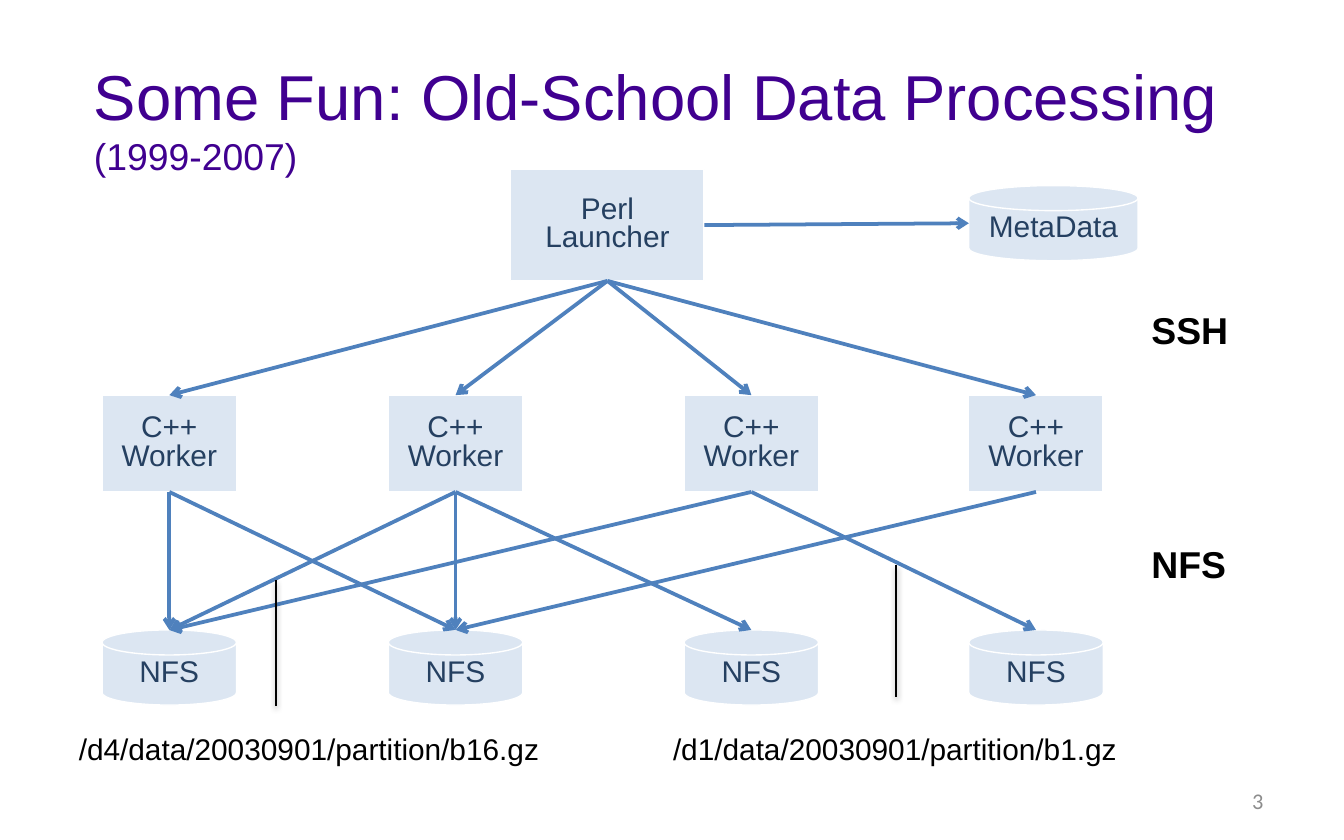
from dataclasses import dataclass

import pptx
import pptx.dml.color
import pptx.enum.shapes
import pptx.enum.text
import pptx.oxml
import pptx.oxml.ns
import pptx.util

Cm = pptx.util.Cm
Pt = pptx.util.Pt
Shape = pptx.enum.shapes.MSO_SHAPE
Align = pptx.enum.text.PP_ALIGN
Anchor = pptx.enum.text.MSO_ANCHOR

PALE, NAVY, BLUE = "DCE6F2", "254061", "4F81BD"
WHITE, BLACK, PURPLE, GRAY = "FFFFFF", "000000", "400090", "8C8C8C"
DRAWING = pptx.oxml.ns.nsdecls("a")
NO_EFFECT = f"<a:effectLst {DRAWING}/>"
SOFT_SHADOW = (
    f'<a:effectLst {DRAWING}><a:outerShdw blurRad="39370" dist="20320" dir="5400000" '
    'rotWithShape="0"><a:srgbClr val="000000"><a:alpha val="38000"/></a:srgbClr>'
    "</a:outerShdw></a:effectLst>"
)


@dataclass(frozen=True)
class Node:
    """A labelled box or disk; lengths in centimetres."""
    text: str
    left: float
    top: float
    width: float
    height: float
    preset: Shape

    @property
    def top_center(self) -> tuple[float, float]:
        return self.left + self.width / 2, self.top

    @property
    def bottom_center(self) -> tuple[float, float]:
        return self.left + self.width / 2, self.top + self.height

    @property
    def left_middle(self) -> tuple[float, float]:
        return self.left, self.top + self.height / 2

    @property
    def right_middle(self) -> tuple[float, float]:
        return self.left + self.width, self.top + self.height / 2


@dataclass(frozen=True)
class Label:
    text: str
    left: float
    top: float
    width: float
    height: float
    size: int
    bold: bool = False


def color(value: str) -> pptx.dml.color.RGBColor:
    return pptx.dml.color.RGBColor.from_string(value)


def style_span(span, size: float, shade: str, bold: bool = False, name: str = "Arial") -> None:
    span.font.name = name
    span.font.size = Pt(size)
    span.font.bold = bold
    span.font.color.rgb = color(shade)


def draw_node(page, node: Node) -> None:
    box = page.shapes.add_shape(
        node.preset, Cm(node.left), Cm(node.top), Cm(node.width), Cm(node.height))
    box.shadow.inherit = False
    box.fill.solid()
    box.fill.fore_color.rgb = color(PALE)
    box.line.color.rgb = color(WHITE)
    box.line.width = Pt(0.75)
    box.text_frame.text = node.text
    box.text_frame.word_wrap = True
    box.text_frame.vertical_anchor = Anchor.MIDDLE
    for para in box.text_frame.paragraphs:
        para.alignment = Align.CENTER
        para.line_spacing = 0.8
        style_span(para.runs[0], 16, NAVY)


def draw_line(page, start: tuple[float, float], end: tuple[float, float],
              shade: str, width: float, effect: str):
    line = page.shapes.add_connector(
        pptx.enum.shapes.MSO_CONNECTOR.STRAIGHT, *map(Cm, start + end))
    line.line.color.rgb = color(shade)
    line.line.width = Pt(width)
    line._element.spPr.append(pptx.oxml.parse_xml(effect))
    return line


def draw_arrow(page, start: tuple[float, float], end: tuple[float, float]) -> None:
    arrow = draw_line(page, start, end, BLUE, 2, NO_EFFECT)
    arrow.line._get_or_add_ln().append(
        pptx.oxml.parse_xml(f'<a:tailEnd {DRAWING} type="arrow"/>'))


def draw_label(page, label: Label) -> None:
    box = page.shapes.add_textbox(
        Cm(label.left), Cm(label.top), Cm(label.width), Cm(label.height))
    box.text_frame.text = label.text
    box.text_frame.word_wrap = False
    style_span(box.text_frame.paragraphs[0].runs[0], label.size, BLACK, label.bold)


def draw_title(page) -> None:
    title = page.shapes.title
    title.left, title.top, title.width, title.height = Cm(1.52), Cm(0.95), Cm(23.88), Cm(3.3)
    frame = title.text_frame
    frame.text = "Some Fun: Old-School Data Processing\n(1999-2007)"
    frame.word_wrap = True
    frame.auto_size = pptx.enum.text.MSO_AUTO_SIZE.NONE
    frame.vertical_anchor = Anchor.TOP
    for para, size in zip(frame.paragraphs, (34, 20)):
        para.alignment = Align.LEFT
        style_span(para.runs[0], size, PURPLE)


def draw_page_number(page) -> None:
    box = page.shapes.add_textbox(Cm(18.21), Cm(14.71), Cm(5.92), Cm(0.84))
    box.text_frame.text = "3"
    box.text_frame.word_wrap = True
    box.text_frame.vertical_anchor = Anchor.MIDDLE
    para = box.text_frame.paragraphs[0]
    para.alignment = Align.RIGHT
    style_span(para.runs[0], 12, GRAY, name="Calibri")


COLUMNS = (1.93, 7.34, 12.93, 18.31)
WORKERS = [Node("C++\nWorker", left, 7.47, 2.54, 1.83, Shape.RECTANGLE) for left in COLUMNS]
DISKS = [Node("NFS", left, 11.91, 2.54, 1.42, Shape.FLOWCHART_MAGNETIC_DISK)
         for left in COLUMNS]
LAUNCHER = Node("Perl Launcher", 9.65, 3.2, 3.66, 2.11, Shape.RECTANGLE)
METADATA = Node("MetaData", COLUMNS[-1], 3.51, 3.2, 1.42, Shape.FLOWCHART_MAGNETIC_DISK)

# For each worker, the disks that it reads
DISKS_READ = ((1, 0), (2, 1, 0), (3, 0), (1,))

LABELS = (
    Label("SSH", 21.51, 5.69, 1.98, 1.12, 20, True),
    Label("NFS", 21.51, 10.11, 1.93, 1.12, 20, True),
    Label("/d4/data/20030901/partition/b16.gz", 1.24, 13.69, 9.32, 0.94, 16),
    Label("/d1/data/20030901/partition/b1.gz", 12.47, 13.69, 9.02, 0.94, 16),
)
# Horizontal position, top and bottom of the lines above the file paths
PATH_MARKERS = ((5.21, 10.97, 13.34), (16.94, 10.69, 13.18))


def main() -> None:
    deck = pptx.Presentation()
    deck.slide_width, deck.slide_height = Cm(25.4), Cm(15.88)
    page = deck.slides.add_slide(deck.slide_layouts.get_by_name("Title Only"))
    draw_title(page)
    for node in (*DISKS, METADATA, *WORKERS, LAUNCHER):
        draw_node(page, node)
    draw_arrow(page, LAUNCHER.right_middle, METADATA.left_middle)
    for worker, targets in zip(WORKERS, DISKS_READ):
        draw_arrow(page, LAUNCHER.bottom_center, worker.top_center)
        for target in targets:
            draw_arrow(page, worker.bottom_center, DISKS[target].top_center)
    for label in LABELS:
        draw_label(page, label)
    for x, top, bottom in PATH_MARKERS:
        draw_line(page, (x, top), (x, bottom), BLACK, 1, SOFT_SHADOW)
    draw_page_number(page)
    deck.save("out.pptx")


if __name__ == "__main__":
    main()
